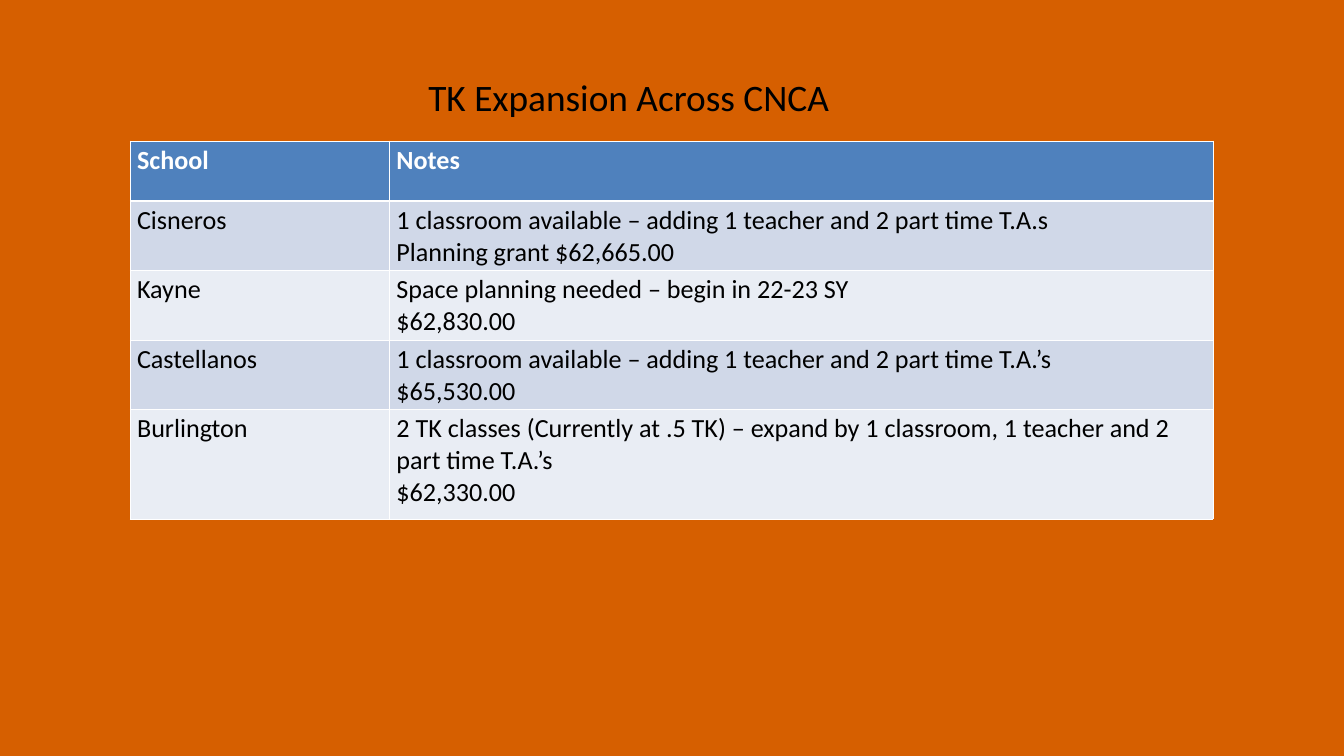
from lxml import etree
from pptx import Presentation
from pptx.dml.color import RGBColor
from pptx.enum.text import PP_ALIGN
from pptx.oxml.ns import qn
from pptx.util import Inches, Pt

CENTER = PP_ALIGN.CENTER

# Content
TITLE = "TK Expansion Across CNCA"
HEADINGS = ("School", "Notes")
SCHOOLS = [
    ("Cisneros", "1 classroom available – adding 1 teacher and 2 part time T.A.s\n"
                 "Planning grant $62,665.00"),
    ("Kayne", "Space planning needed – begin in 22-23 SY\n$62,830.00"),
    ("Castellanos", "1 classroom available – adding 1 teacher and 2 part time T.A.’s\n"
                    "$65,530.00"),
    ("Burlington", "2 TK classes (Currently at .5 TK) – expand by 1 classroom, "
                   "1 teacher and 2 part time T.A.’s\n$62,330.00"),
]

THEME = {
    "font": "Calibri", "title_size": 40, "table_size": 28,
    "background": "D65F00", "text": "000000",
    "header_fill": "4F81BD", "header_text": "FFFFFF",
    "bands": ("D0D8E8", "E9EDF4"),
    "border": "FFFFFF", "border_width": 1, "header_rule_width": 3,
}

# Layout in inches
TITLE_BOX = (0.33, 1.06, 18.05, 0.77)
TABLE_LEFT, TABLE_TOP = 1.94, 2.1
COLUMN_WIDTHS = (3.86, 12.25)
ROW_HEIGHT, LAST_ROW_HEIGHT = 0.89, 1.63


def style_text(frame, size, color, bold=False):
    for paragraph in frame.paragraphs:
        for run in paragraph.runs:
            run.font.name = THEME["font"]
            run.font.size = Pt(size)
            run.font.bold = bold
            run.font.color.rgb = RGBColor.from_string(color)


def add_borders(cell, top_width, bottom_width):
    properties = cell._tc.get_or_add_tcPr()
    side_width = THEME["border_width"]
    widths = {"L": side_width, "R": side_width, "T": top_width, "B": bottom_width}
    for side, width in widths.items():
        line = etree.SubElement(properties, qn(f"a:ln{side}"), w=str(Pt(width)))
        fill = etree.SubElement(line, qn("a:solidFill"))
        etree.SubElement(fill, qn("a:srgbClr"), val=THEME["border"])


def add_title(slide):
    title = slide.shapes.add_textbox(*map(Inches, TITLE_BOX))
    frame = title.text_frame
    frame.word_wrap = True
    frame.text = TITLE
    frame.paragraphs[0].alignment = CENTER
    style_text(frame, THEME["title_size"], THEME["text"])


def add_school_table(slide):
    rows = [HEADINGS, *SCHOOLS]
    heights = [ROW_HEIGHT] * (len(rows) - 1) + [LAST_ROW_HEIGHT]
    table = slide.shapes.add_table(
        len(rows), len(HEADINGS), Inches(TABLE_LEFT), Inches(TABLE_TOP),
        Inches(sum(COLUMN_WIDTHS)), Inches(sum(heights))).table
    for column, width in zip(table.columns, COLUMN_WIDTHS):
        column.width = Inches(width)

    thin, thick = THEME["border_width"], THEME["header_rule_width"]
    for r, (values, height) in enumerate(zip(rows, heights)):
        table.rows[r].height = Inches(height)
        is_header = r == 0
        fill = THEME["header_fill"] if is_header else THEME["bands"][(r - 1) % 2]
        color = THEME["header_text"] if is_header else THEME["text"]
        for c, value in enumerate(values):
            cell = table.cell(r, c)
            cell.text_frame.text = value
            style_text(cell.text_frame, THEME["table_size"], color, is_header)
            add_borders(cell, thick if r == 1 else thin, thick if is_header else thin)
            cell.fill.solid()
            cell.fill.fore_color.rgb = RGBColor.from_string(fill)


def main():
    deck = Presentation()
    deck.slide_width, deck.slide_height = Inches(20), Inches(11.25)
    slide = deck.slides.add_slide(deck.slide_layouts[6])
    background = slide.background.fill
    background.solid()
    background.fore_color.rgb = RGBColor.from_string(THEME["background"])
    add_title(slide)
    add_school_table(slide)
    deck.save("out.pptx")


if __name__ == "__main__":
    main()
